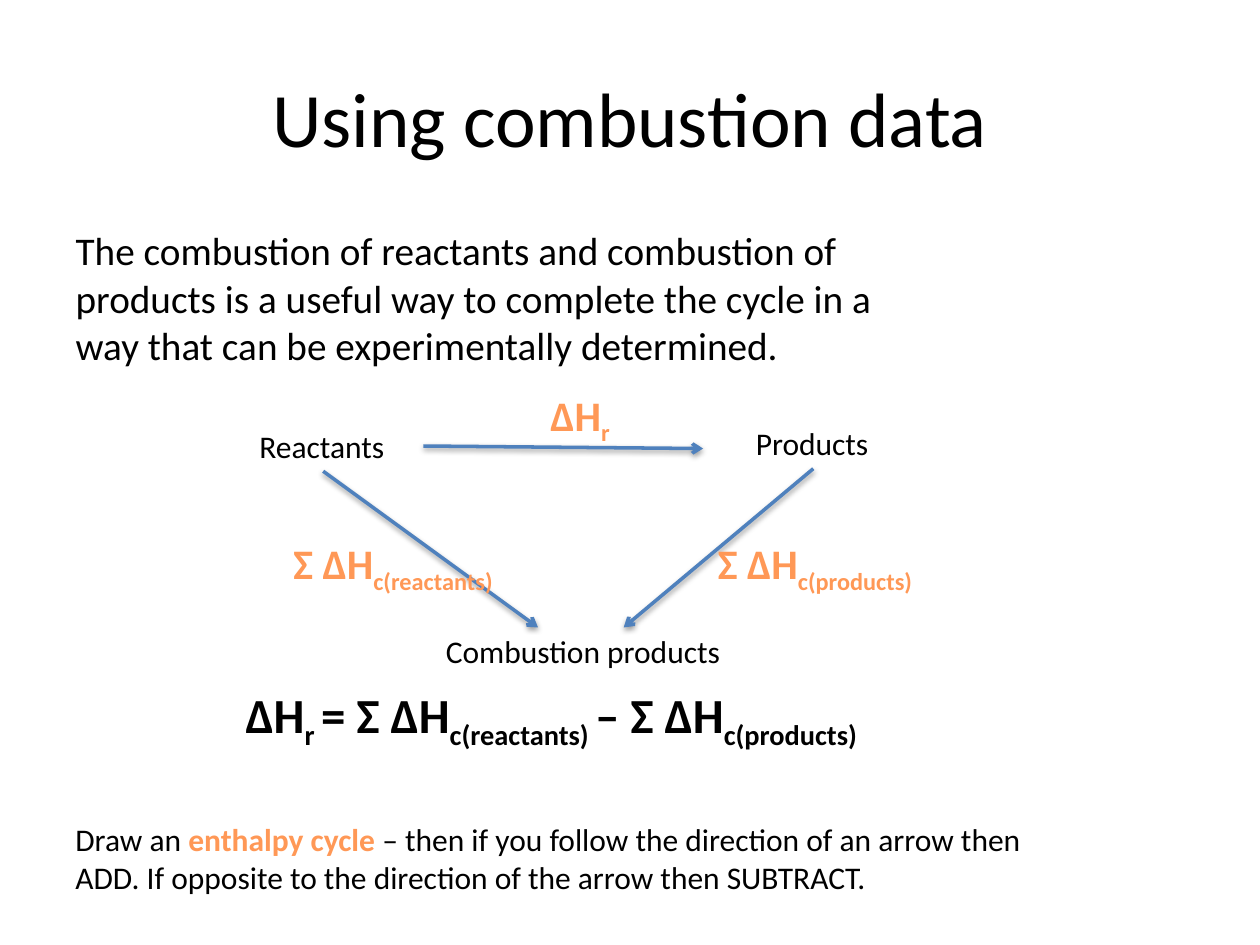
from lxml import etree
from pptx import Presentation
from pptx.dml.color import RGBColor
from pptx.enum.shapes import MSO_CONNECTOR
from pptx.enum.text import MSO_ANCHOR, MSO_AUTO_SIZE, PP_ALIGN
from pptx.oxml import parse_xml
from pptx.oxml.ns import nsdecls, qn
from pptx.util import Inches, Pt

STRAIGHT = MSO_CONNECTOR.STRAIGHT
MIDDLE = MSO_ANCHOR.MIDDLE
NO_FIT = MSO_AUTO_SIZE.NONE
GROW = MSO_AUTO_SIZE.SHAPE_TO_FIT_TEXT
CENTER = PP_ALIGN.CENTER

BLACK = RGBColor(0x00, 0x00, 0x00)
ORANGE = RGBColor(0xFF, 0x98, 0x56)
BLUE = RGBColor(0x4F, 0x81, 0xBD)
FONT = "Calibri"
BOTTOM_SIDE = 2
CELL = 0.1  # side of one grid cell, in inches

SHADOW = (
    f'<a:effectLst {nsdecls("a")}>'
    '<a:outerShdw blurRad="40000" dist="20000" dir="5400000" rotWithShape="0">'
    '<a:srgbClr val="000000"><a:alpha val="38000"/></a:srgbClr>'
    '</a:outerShdw></a:effectLst>'
)


def place(shape, box):
    shape.left, shape.top, shape.width, shape.height = map(Inches, box)


def style(font, size, color=BLACK, bold=False):
    font.name, font.size, font.bold = FONT, Pt(size), bold
    font.color.rgb = color


def add_title(page, box):
    title = page.shapes.title
    place(title, box)
    frame = title.text_frame
    frame.text = "Using combustion data"
    frame.vertical_anchor = MIDDLE
    frame.auto_size = NO_FIT
    para = frame.paragraphs[0]
    para.alignment = CENTER
    style(para.runs[0].font, 44)


def add_intro(page, box):
    body = page.placeholders[1]
    place(body, box)
    frame = body.text_frame
    frame.text = (
        "The combustion of reactants and combustion of products is a useful "
        "way to complete the cycle in a way that can be experimentally determined."
    )
    frame.auto_size = NO_FIT
    para = frame.paragraphs[0]
    properties = para._p.get_or_add_pPr()
    properties.set("marL", "0")
    properties.set("indent", "0")
    etree.SubElement(properties, qn("a:buNone"))
    para.space_before = Pt(0)
    style(para.runs[0].font, 22.4)


def add_advice(page, box):
    frame = page.shapes.add_textbox(*map(Inches, box)).text_frame
    frame.word_wrap = True
    frame.auto_size = GROW
    pieces = [
        ("Draw an ", BLACK, False),
        ("enthalpy cycle ", ORANGE, True),
        ("– then if you follow the direction of an arrow then ADD. "
         "If opposite to the direction of the arrow then SUBTRACT.", BLACK, False),
    ]
    for text, color, bold in pieces:
        span = frame.paragraphs[0].add_run()
        span.text = text
        style(span.font, 18, color, bold)


def add_formula(shapes, box, pieces, size, color=BLACK, bold=True):
    """Add one unwrapped line in which every second piece is a subscript."""
    text_box = shapes.add_textbox(*map(Inches, box))
    frame = text_box.text_frame
    frame.word_wrap = False
    frame.auto_size = GROW
    for index, text in enumerate(pieces):
        span = frame.paragraphs[0].add_run()
        span.text = text
        style(span.font, size, color, bold)
        if index % 2:
            span._r.get_or_add_rPr().set("baseline", "-25000")
    return text_box


def add_arrow(shapes, start, end):
    arrow = shapes.add_connector(STRAIGHT, *map(Inches, start + end))
    arrow.line.color.rgb = BLUE
    arrow.line.width = Pt(2)
    etree.SubElement(arrow.line._get_or_add_ln(), qn("a:tailEnd"), type="arrow")
    arrow._element.spPr.append(parse_xml(SHADOW))
    return arrow


def add_enthalpy_cycle(page, left, top):
    """Draw the cycle on a grid of small cells that starts at left, top."""
    shapes = page.shapes.add_group_shape().shapes

    def point(column, row):
        return left + column * CELL, top + row * CELL

    def area(column, row, columns, rows):
        return point(column, row) + (columns * CELL, rows * CELL)

    stages = [
        ("Reactants", area(4.6, 3.4, 12.1, 4)),
        ("Products", area(44, 3.2, 11.1, 4)),
        ("Combustion products", area(19.4, 19.7, 24.1, 4)),
    ]
    reactants, products, _ = [
        add_formula(shapes, box, [name], 18, bold=False) for name, box in stages
    ]

    add_arrow(shapes, point(18.6, 5.4), point(40.8, 5.6))
    for stage, start, end in [
        (reactants, point(10.6, 7.4), point(27.7, 19.8)),
        (products, point(49.6, 7.3), point(34.5, 19.8)),
    ]:
        add_arrow(shapes, start, end).begin_connect(stage, BOTTOM_SIDE)

    for pieces, box in [
        (["ΔH", "r"], area(27.7, 0.4, 6.9, 5)),
        (["Σ ΔH", "c(reactants)"], area(7.3, 12.2, 19.5, 5)),
        (["Σ ΔH", "c(products)"], area(41, 12.2, 19, 5)),
    ]:
        add_formula(shapes, box, pieces, 24, ORANGE)

    equation = ["ΔH", "r ", "= Σ ΔH", "c(reactants) ", "– Σ ΔH", "c(products)"]
    add_formula(shapes, area(3.5, 23.8, 55.9, 5.7), equation, 28)


def main():
    deck = Presentation()
    deck.slide_width, deck.slide_height = Inches(10), Inches(7.5)
    page = deck.slides.add_slide(deck.slide_layouts[1])
    add_title(page, (0.5, 0.3, 9, 1.25))
    add_intro(page, (0.5, 1.75, 6.8, 1.29))
    add_advice(page, (0.5, 6.46, 8.21, 0.71))
    add_enthalpy_cycle(page, 1.5, 3)
    deck.save("out.pptx")


if __name__ == "__main__":
    main()
